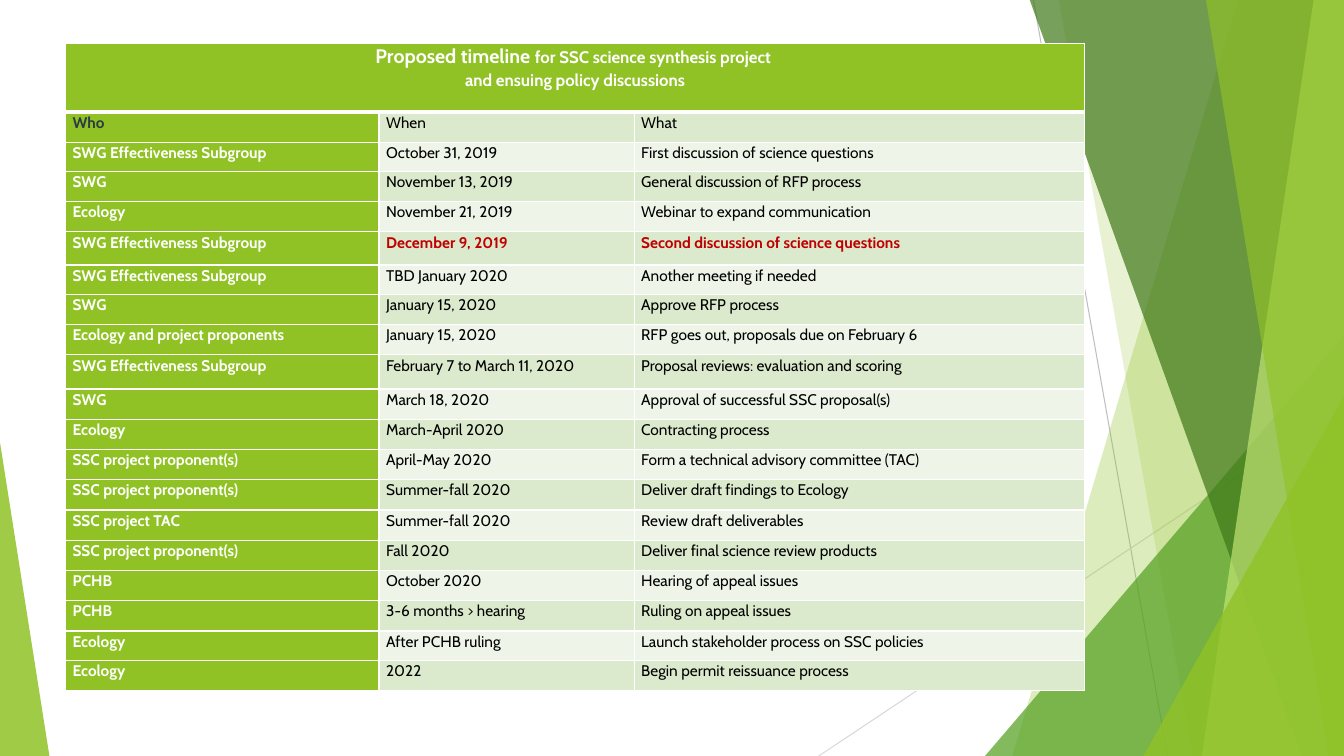
from pptx import Presentation
from pptx.dml.color import RGBColor
from pptx.enum.shapes import MSO_CONNECTOR, MSO_SHAPE
from pptx.enum.text import PP_ALIGN
from pptx.oxml.ns import qn
from pptx.util import Inches, Pt
from lxml.etree import SubElement, Element

FONT = "Cabin"
COLORS = {
    "white": "FFFFFF", "black": "000000", "red": "C00000", "slate": "2C3C43",
    "lime": "90C226", "green": "54A021", "forest": "3F7819", "pale_lime": "C0E474",
    "band_dark": "DBE9CD", "band_light": "EEF4E8",
    "gray": "BFBFBF", "light_gray": "D9D9D9",
}
TOP, BOTTOM, RIGHT = -0.01, 7.5, 13.33
COLUMN_WIDTHS = [3.11, 2.53, 4.47]
TITLE_HEIGHT, ROW_HEIGHT = 0.68, 0.3
SPECIAL_HEIGHTS = {2: 0.29, 5: 0.33, 6: 0.29, 9: 0.34, 18: 0.29}
HIGHLIGHTED_ROW = 5
TIMELINE = [
    ("Who", "When", "What"),
    ("SWG Effectiveness Subgroup", "October 31, 2019", "First discussion of science questions"),
    ("SWG", "November 13, 2019", "General discussion of RFP process"),
    ("Ecology", "November 21, 2019", "Webinar to expand communication"),
    ("SWG Effectiveness Subgroup", "December 9, 2019", "Second discussion of science questions"),
    ("SWG Effectiveness Subgroup", "TBD January 2020", "Another meeting if needed"),
    ("SWG", "January 15, 2020", "Approve RFP process"),
    ("Ecology and project proponents", "January 15, 2020", "RFP goes out, proposals due on February 6"),
    ("SWG Effectiveness Subgroup", "February 7 to March 11, 2020", "Proposal reviews: evaluation and scoring"),
    ("SWG", "March 18, 2020", "Approval of successful SSC proposal(s)"),
    ("Ecology", "March-April 2020", "Contracting process"),
    ("SSC project proponent(s)", "April-May 2020", "Form a technical advisory committee (TAC)"),
    ("SSC project proponent(s)", "Summer-fall 2020", "Deliver draft findings to Ecology"),
    ("SSC project TAC", "Summer-fall 2020", "Review draft deliverables"),
    ("SSC project proponent(s)", "Fall 2020", "Deliver final science review products"),
    ("PCHB", "October 2020", "Hearing of appeal issues"),
    ("PCHB", "3-6 months > hearing", "Ruling on appeal issues"),
    ("Ecology", "After PCHB ruling", "Launch stakeholder process on SSC policies"),
    ("Ecology", "2022", "Begin permit reissuance process"),
]


def rgb(name):
    return RGBColor.from_string(COLORS[name])


def add_line(slide, start, end, color):
    line = slide.shapes.add_connector(
        MSO_CONNECTOR.STRAIGHT, *[Inches(value) for value in (*start, *end)])
    line.line.color.rgb = rgb(color)
    line.line.width = Pt(0.75)
    SubElement(line._element.spPr, qn("a:effectLst"))


def paint(shape, color, opacity):
    shape.shadow.inherit = False
    shape.line.fill.background()
    shape.fill.solid()
    shape.fill.fore_color.rgb = rgb(color)
    color_element = shape._element.spPr.find(qn("a:solidFill"))[0]
    SubElement(color_element, qn("a:alpha"), val=str(opacity * 1000))


def add_shard(slide, top_left, bottom_left, color, opacity):
    points = [(top_left, TOP), (RIGHT, TOP), (RIGHT, BOTTOM), (bottom_left, BOTTOM)]
    corners = [(Inches(x), Inches(y)) for x, y in points]
    builder = slide.shapes.build_freeform(*corners[0])
    builder.add_line_segments(corners[1:], close=True)
    paint(builder.convert_to_shape(), color, opacity)


def add_triangle(slide, left, top, width, apex, color, opacity):
    triangle = slide.shapes.add_shape(
        MSO_SHAPE.ISOSCELES_TRIANGLE, Inches(left), Inches(top),
        Inches(width), Inches(BOTTOM - top))
    triangle.adjustments[0] = apex
    paint(triangle, color, opacity)


def add_backdrop(slide):
    add_line(slide, (10.25, 0), (11.58, BOTTOM), "gray")
    add_line(slide, (RIGHT, 4.03), (8.12, BOTTOM), "light_gray")
    add_shard(slide, 12.28, 10.04, "lime", 30)
    add_shard(slide, 10.5, 11.83, "lime", 20)
    add_triangle(slide, 9.77, 3.33, 3.56, 1, "green", 72)
    add_shard(slide, 10.21, 12.91, "forest", 70)
    add_shard(slide, 13.03, 11.92, "pale_lime", 70)
    add_shard(slide, 11.96, 13.18, "lime", 65)
    add_triangle(slide, 11.34, 3.93, 1.99, 1, "lime", 80)
    add_triangle(slide, 0, 4.39, 0.49, 0, "lime", 85)


def set_borders(cell, top=1, bottom=1):
    properties = cell._tc.get_or_add_tcPr()
    widths = {"a:lnL": 1, "a:lnR": 1, "a:lnT": top, "a:lnB": bottom}
    for position, (tag, width) in enumerate(widths.items()):
        border = Element(qn(tag), w=str(Pt(width)))
        fill = SubElement(border, qn("a:solidFill"))
        SubElement(fill, qn("a:srgbClr"), val=COLORS["white"])
        properties.insert(position, border)


def format_cell(cell, fill, color, bold):
    cell.margin_left = cell.margin_right = Inches(0.07)
    cell.margin_top = cell.margin_bottom = 0
    cell.fill.solid()
    cell.fill.fore_color.rgb = rgb(fill)
    paragraph = cell.text_frame.paragraphs[0]
    paragraph.line_spacing = 1.07
    paragraph.font.name = FONT
    paragraph.font.size = Pt(11)
    paragraph.font.bold = bold
    paragraph.font.color.rgb = rgb(color)
    return paragraph


def fill_title(table):
    cell = table.cell(0, 0)
    cell.merge(table.cell(0, 2))
    paragraph = format_cell(cell, "lime", "white", True)
    paragraph.alignment = PP_ALIGN.CENTER
    lead = paragraph.add_run()
    lead.text = "Proposed timeline "
    lead.font.size = Pt(14)
    for position, text in enumerate(
            ["for SSC science synthesis project ", "and ensuing policy discussions"]):
        if position:
            paragraph.add_line_break()
        run = paragraph.add_run()
        run.text = text
        run.font.size = Pt(12)
    for column in range(3):
        set_borders(table.cell(0, column), bottom=3)


def fill_row(table, row, texts):
    band = "band_dark" if row % 2 else "band_light"
    highlighted = row == HIGHLIGHTED_ROW
    for column, text in enumerate(texts):
        cell = table.cell(row, column)
        cell.text = text
        if column == 0:
            format_cell(cell, "lime", "slate" if row == 1 else "white", True)
        else:
            format_cell(cell, band, "red" if highlighted else "black", highlighted)
        set_borders(cell, top=3 if row == 1 else 1)


def add_timeline(slide):
    table = slide.shapes.add_table(
        len(TIMELINE) + 1, 3, Inches(0.65), Inches(0.43), Inches(10.1), Inches(6.47)).table
    for column, width in zip(table.columns, COLUMN_WIDTHS):
        column.width = Inches(width)
    for index, row in enumerate(table.rows):
        row.height = Inches(SPECIAL_HEIGHTS.get(index, ROW_HEIGHT))
    table.rows[0].height = Inches(TITLE_HEIGHT)
    fill_title(table)
    for index, texts in enumerate(TIMELINE, start=1):
        fill_row(table, index, texts)


def main():
    presentation = Presentation()
    presentation.slide_width = Inches(RIGHT)
    presentation.slide_height = Inches(BOTTOM)
    slide = presentation.slides.add_slide(presentation.slide_layouts[6])
    add_backdrop(slide)
    add_timeline(slide)
    presentation.save("out.pptx")


if __name__ == "__main__":
    main()
